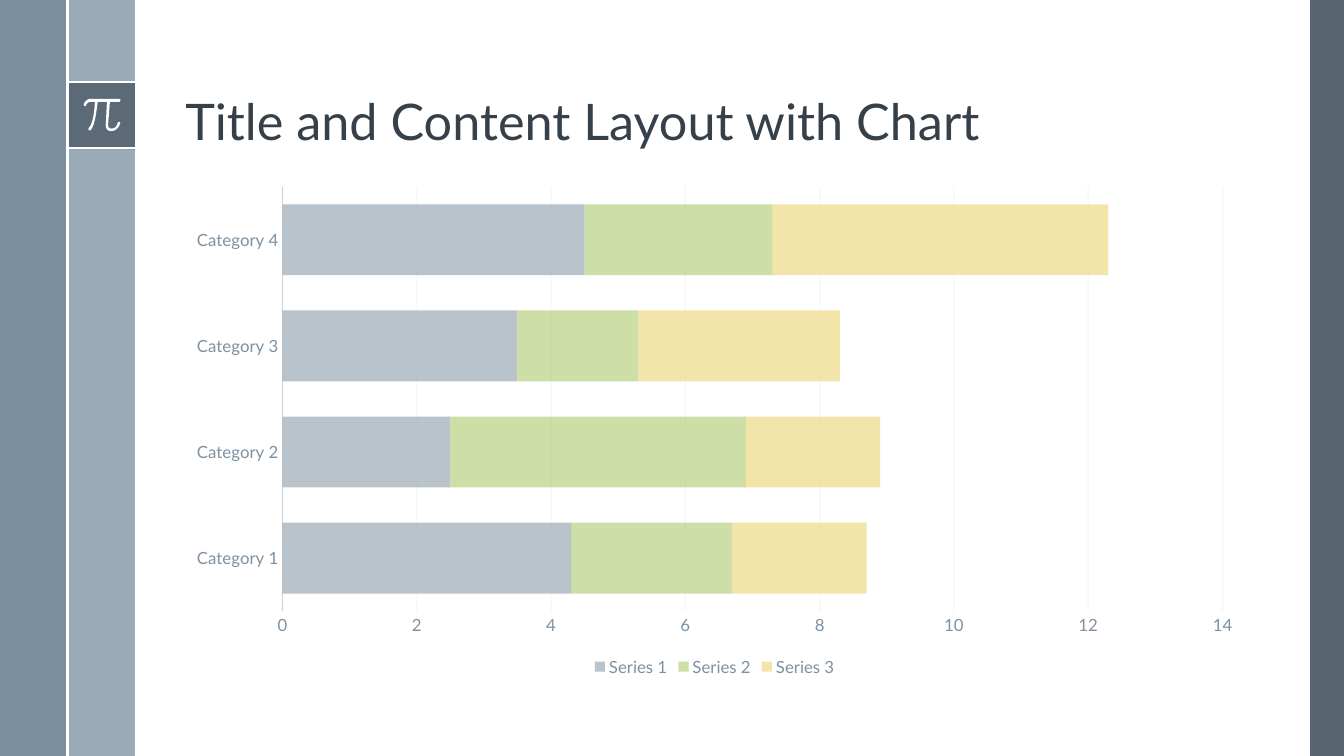
import pptx
import pptx.chart.data
import pptx.dml.color
import pptx.enum.chart
import pptx.enum.shapes
import pptx.enum.text
import pptx.oxml.ns
import pptx.oxml.xmlchemy
import pptx.util

Cm = pptx.util.Cm
Pt = pptx.util.Pt
RGBColor = pptx.dml.color.RGBColor

FONT = "Lato"
WHITE = RGBColor(0xFF, 0xFF, 0xFF)
SLATE = RGBColor(0x47, 0x55, 0x62)
STEEL = RGBColor(0x6A, 0x80, 0x93)
MIST = RGBColor(0x9B, 0xAA, 0xB7)
GREEN = RGBColor(0xB8, 0xD0, 0x82)
YELLOW = RGBColor(0xEF, 0xDB, 0x85)
TITLE_COLOR = RGBColor(0x35, 0x40, 0x4A)
LABEL_COLOR = RGBColor(0x7D, 0x91, 0xA2)
AXIS_COLOR = RGBColor(0xCD, 0xD5, 0xDB)
GRID_COLOR = RGBColor(0xE1, 0xE6, 0xEA)

TITLE = "Title and Content Layout with Chart"
CATEGORIES = ["Category 1", "Category 2", "Category 3", "Category 4"]
SERIES = [
    ("Series 1", (4.3, 2.5, 3.5, 4.5), MIST),
    ("Series 2", (2.4, 4.4, 1.8, 2.8), GREEN),
    ("Series 3", (2, 2, 3, 5), YELLOW),
]

WIDTH, HEIGHT = 33.87, 19.05
STRIP = 1.7
BADGE_TOP, BADGE_BOTTOM = 2.06, 3.74
RIGHT_EDGE = 33.02
CONTENT_LEFT, CONTENT_WIDTH = 4.42, 27.18

PANELS = [
    (RIGHT_EDGE, 0, WIDTH - RIGHT_EDGE, HEIGHT, SLATE, 90),
    (STRIP, 0, STRIP, HEIGHT, MIST, 100),
    (0, 0, STRIP, HEIGHT, STEEL, 88),
    (STRIP, BADGE_TOP, STRIP, STRIP, SLATE, 75),
]
RULES = [
    (STRIP, BADGE_TOP, 2 * STRIP, BADGE_TOP),
    (STRIP, BADGE_BOTTOM, 2 * STRIP, BADGE_BOTTOM),
    (STRIP, 0, STRIP, HEIGHT),
]

PI_LEFT, PI_TOP, PI_UNIT = 2.11, 2.49, 0.0254
PI_START = (35, 0)
PI_SEGMENTS = [
    [(7, 0)],
    [(2, 0), (0, 5), (0, 6)],
    [(0, 7.5), (2, 7.5), (2.3, 6.5)],
    [(2.5, 5.5), (4, 3), (7, 3)],
    [(11, 3)],
    [(11, 7), (10, 24), (5, 29)],
    [(4, 31), (6, 32), (7, 31)],
    [(12, 25), (13, 7), (14, 3)],
    [(23, 3)],
    [(22, 24)],
    [(21.5, 27), (22, 32), (27, 32)],
    [(34, 32), (36, 25), (36.3, 24)],
    [(36.3, 22.5), (34, 22.5), (33.7, 24)],
    [(33, 26), (32, 29.5), (27.5, 29.5)],
    [(24, 29.5), (24, 26), (24.3, 24)],
    [(26, 3)],
    [(35, 3)],
    [(37, 3), (37, 0), (35, 0)],
]
CURVE_STEPS = 8


def set_alpha(element, percent):
    color = next(element.iter(pptx.oxml.ns.qn("a:srgbClr")))
    alpha = pptx.oxml.xmlchemy.OxmlElement("a:alpha")
    alpha.set("val", str(percent * 1000))
    color.append(alpha)


def fill_plain(shape, color):
    shape.shadow.inherit = False
    shape.fill.solid()
    shape.fill.fore_color.rgb = color
    shape.line.fill.background()


def set_font(font, size, color):
    font.name = FONT
    font.size = Pt(size)
    font.color.rgb = color


def pi_outline():
    points = [PI_START]
    for segment in PI_SEGMENTS:
        if len(segment) == 1:
            points += segment
            continue
        controls = [points[-1]] + segment
        for step in range(1, CURVE_STEPS + 1):
            t = step / CURVE_STEPS
            weights = ((1 - t) ** 3, 3 * t * (1 - t) ** 2, 3 * t * t * (1 - t), t ** 3)
            points.append(tuple(
                sum(weight * control[axis] for weight, control in zip(weights, controls))
                for axis in (0, 1)
            ))
    return [(Cm(PI_LEFT + x * PI_UNIT), Cm(PI_TOP + y * PI_UNIT)) for x, y in points]


def add_decoration(slide):
    for left, top, width, height, color, alpha in PANELS:
        panel = slide.shapes.add_shape(
            pptx.enum.shapes.MSO_SHAPE.RECTANGLE, Cm(left), Cm(top), Cm(width), Cm(height))
        fill_plain(panel, color)
        if alpha < 100:
            set_alpha(panel.element.spPr, alpha)

    for ends in RULES:
        rule = slide.shapes.add_connector(
            pptx.enum.shapes.MSO_CONNECTOR.STRAIGHT, *(Cm(value) for value in ends))
        rule.line.color.rgb = WHITE
        rule.line.width = Pt(1.5)
        rule.element.spPr.append(pptx.oxml.xmlchemy.OxmlElement("a:effectLst"))

    first, *rest = pi_outline()
    builder = slide.shapes.build_freeform(*first)
    builder.add_line_segments(rest, close=True)
    fill_plain(builder.convert_to_shape(), WHITE)


def add_title(slide):
    box = slide.shapes.add_textbox(Cm(CONTENT_LEFT), Cm(0.48), Cm(CONTENT_WIDTH), Cm(3.46))
    frame = box.text_frame
    frame.word_wrap = True
    frame.vertical_anchor = pptx.enum.text.MSO_ANCHOR.BOTTOM
    paragraph = frame.paragraphs[0]
    paragraph.line_spacing = 0.9
    run = paragraph.add_run()
    run.text = TITLE
    set_font(run.font, 36, TITLE_COLOR)


def add_bar_chart(slide):
    data = pptx.chart.data.CategoryChartData()
    data.categories = CATEGORIES
    for name, values, color in SERIES:
        data.add_series(name, values)
    chart = slide.shapes.add_chart(
        pptx.enum.chart.XL_CHART_TYPE.BAR_STACKED,
        Cm(CONTENT_LEFT), Cm(4.45), Cm(CONTENT_WIDTH), Cm(12.7), data).chart
    set_font(chart.font, 12, LABEL_COLOR)
    chart.has_title = False
    chart.has_legend = True
    chart.legend.position = pptx.enum.chart.XL_LEGEND_POSITION.BOTTOM
    chart.legend.include_in_layout = False
    set_font(chart.legend.font, 12, LABEL_COLOR)

    plot = chart.plots[0]
    plot.gap_width = 50
    plot.overlap = 100
    plot.vary_by_categories = False
    for series, (name, values, color) in zip(plot.series, SERIES):
        series.format.fill.solid()
        series.format.fill.fore_color.rgb = color
    for element in chart.element.iter(pptx.oxml.ns.qn("c:ser")):
        set_alpha(element, 70)

    for axis in (chart.category_axis, chart.value_axis):
        axis.major_tick_mark = pptx.enum.chart.XL_TICK_MARK.NONE
        axis.minor_tick_mark = pptx.enum.chart.XL_TICK_MARK.NONE
        set_font(axis.tick_labels.font, 12, LABEL_COLOR)
    chart.category_axis.format.line.color.rgb = AXIS_COLOR
    chart.category_axis.format.line.width = Pt(0.75)

    value_axis = chart.value_axis
    value_axis.minimum_scale = 0
    value_axis.maximum_scale = 14
    value_axis.major_unit = 2
    value_axis.format.line.fill.background()
    value_axis.has_major_gridlines = True
    grid_line = value_axis.major_gridlines.format.line
    grid_line.color.rgb = GRID_COLOR
    grid_line.width = Pt(0.75)
    for element in chart.element.iter(pptx.oxml.ns.qn("c:majorGridlines")):
        set_alpha(element, 40)


def main():
    presentation = pptx.Presentation()
    presentation.slide_width = Cm(WIDTH)
    presentation.slide_height = Cm(HEIGHT)
    slide = presentation.slides.add_slide(presentation.slide_layouts[6])
    add_decoration(slide)
    add_title(slide)
    add_bar_chart(slide)
    presentation.save("out.pptx")


if __name__ == "__main__":
    main()
